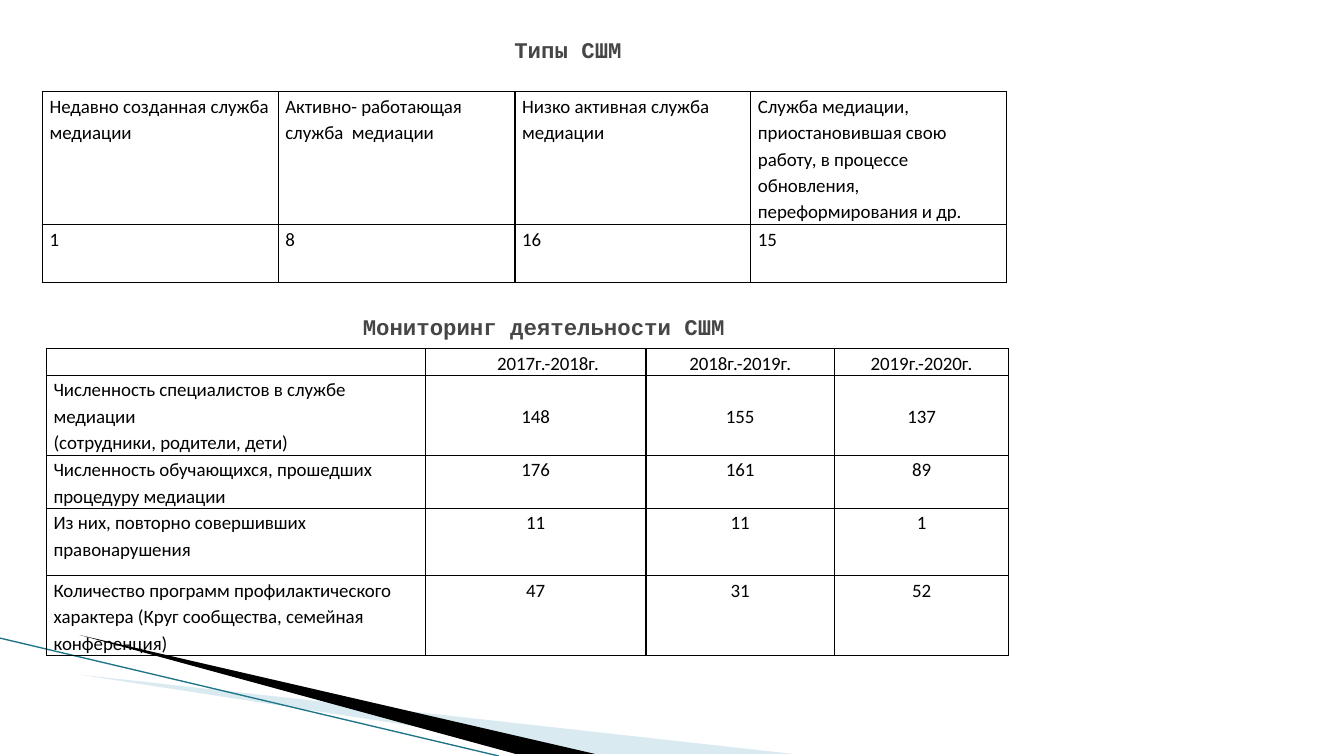
"""Build a slide with two tables on school mediation services."""
from lxml import etree
from pptx import Presentation
from pptx import util as u
from pptx.dml.color import RGBColor
from pptx.enum import shapes, text
from pptx.oxml import ns

BLACK = RGBColor(0, 0, 0)
GREY = RGBColor(0x46, 0x46, 0x46)
PALE_BLUE = RGBColor(0xA0, 0xCB, 0xDC)
TEAL = RGBColor(0x1F, 0x75, 0x88)

TYPES = [
    ["Недавно созданная служба медиации", "Активно- работающая служба  медиации",
     "Низко активная служба медиации",
     "Служба медиации, приостановившая свою работу, в процессе обновления, переформирования и др."],
    ["1", "8", "16", "15"],
]
MONITORING = [
    ["", "2017г.-2018г.", "2018г.-2019г.", "2019г.-2020г."],
    ["Численность специалистов в службе медиации\n(сотрудники, родители, дети)", "148", "155", "137"],
    ["Численность обучающихся, прошедших процедуру медиации", "176", "161", "89"],
    ["Из них, повторно совершивших правонарушения", "11", "11", "1"],
    ["Количество программ профилактического характера (Круг сообщества, семейная конференция)",
     "47", "31", "52"],
]


def add_heading(page, left, top, wording):
    box = page.shapes.add_textbox(u.Cm(left), u.Cm(top), u.Cm(24.87), u.Cm(1.14))
    box.text_frame.word_wrap = True
    box.text_frame.vertical_anchor = text.MSO_ANCHOR.MIDDLE
    para = box.text_frame.paragraphs[0]
    para.text = wording
    para.alignment = text.PP_ALIGN.CENTER
    para.font.name = "Courier New"
    para.font.size = u.Pt(16)
    para.font.bold = True
    para.font.color.rgb = GREY


def add_grid(page, left, top, widths, heights, rows, centred_from):
    table = page.shapes.add_table(len(rows), len(widths), u.Cm(left), u.Cm(top),
                                  u.Cm(sum(widths)), u.Cm(sum(heights))).table
    table.first_row = table.horz_banding = False
    for column, width in zip(table.columns, widths):
        column.width = u.Cm(width)
    for row, height, wordings in zip(table.rows, heights, rows):
        row.height = u.Cm(height)
        for index, (cell, wording) in enumerate(zip(row.cells, wordings)):
            cell.text = wording
            cell.margin_left = cell.margin_right = u.Cm(0.18)
            cell.margin_top = cell.margin_bottom = 0
            properties = cell._tc.get_or_add_tcPr()
            for side in ("a:lnL", "a:lnR", "a:lnT", "a:lnB"):
                border = etree.SubElement(properties, ns.qn(side), w=str(u.Pt(1)))
                fill = etree.SubElement(border, ns.qn("a:solidFill"))
                etree.SubElement(fill, ns.qn("a:srgbClr"), val=str(BLACK))
            cell.fill.background()
            for para in cell.text_frame.paragraphs:
                para.line_spacing = 1.15
                para.alignment = text.PP_ALIGN.CENTER if index >= centred_from else text.PP_ALIGN.LEFT
                para.font.name = "Calibri"
                para.font.size = u.Pt(13.5)
                para.font.color.rgb = BLACK
                if not wording:
                    etree.SubElement(para._p, ns.qn("a:endParaRPr"), sz="1350")
    return table


deck = Presentation()
deck.slide_width, deck.slide_height = u.Cm(33.87), u.Cm(19.05)
page = deck.slides.add_slide(deck.slide_layouts[6])

wedges = [
    (PALE_BLUE, [(1.85, 16.51), (20.14, 19.05), (15.44, 19.05)]),
    (BLACK, [(1.8, 16.48), (15.44, 19.05), (12.6, 19.05)]),
]
for colour, points in wedges:
    builder = page.shapes.build_freeform(*points[0], scale=u.Cm(1))
    builder.add_line_segments(points[1:])
    wedge = builder.convert_to_shape()
    wedge.shadow.inherit = False
    wedge.fill.solid()
    wedge.fill.fore_color.rgb = colour
    wedge.line.fill.background()
    if colour == PALE_BLUE:
        shade = wedge._element.spPr.find(".//" + ns.qn("a:srgbClr"))
        etree.SubElement(shade, ns.qn("a:alpha"), val="40000")

edge = page.shapes.add_connector(shapes.MSO_CONNECTOR.STRAIGHT,
                                 u.Cm(0), u.Cm(16.08), u.Cm(12.57), u.Cm(19.05))
edge.line.color.rgb = TEAL
edge.line.width = u.Pt(0.95)
etree.SubElement(edge._element.spPr, ns.qn("a:effectLst"))

add_heading(page, 1.88, 0.69, "Типы СШМ")
add_grid(page, 1.07, 2.31, [5.94, 5.97, 5.94, 6.45], [3.35, 1.45], TYPES, 4)
add_heading(page, 1.27, 7.65, "Мониторинг деятельности СШМ")
monitoring = add_grid(page, 1.17, 8.79, [9.55, 5.56, 4.75, 4.39],
                      [0.67, 2.01, 1.34, 1.7, 2.01], MONITORING, 1)
monitoring.cell(0, 1).margin_left = u.Cm(0.8)
for column in range(1, 4):
    monitoring.cell(1, column).vertical_anchor = text.MSO_ANCHOR.MIDDLE

deck.save("out.pptx")
